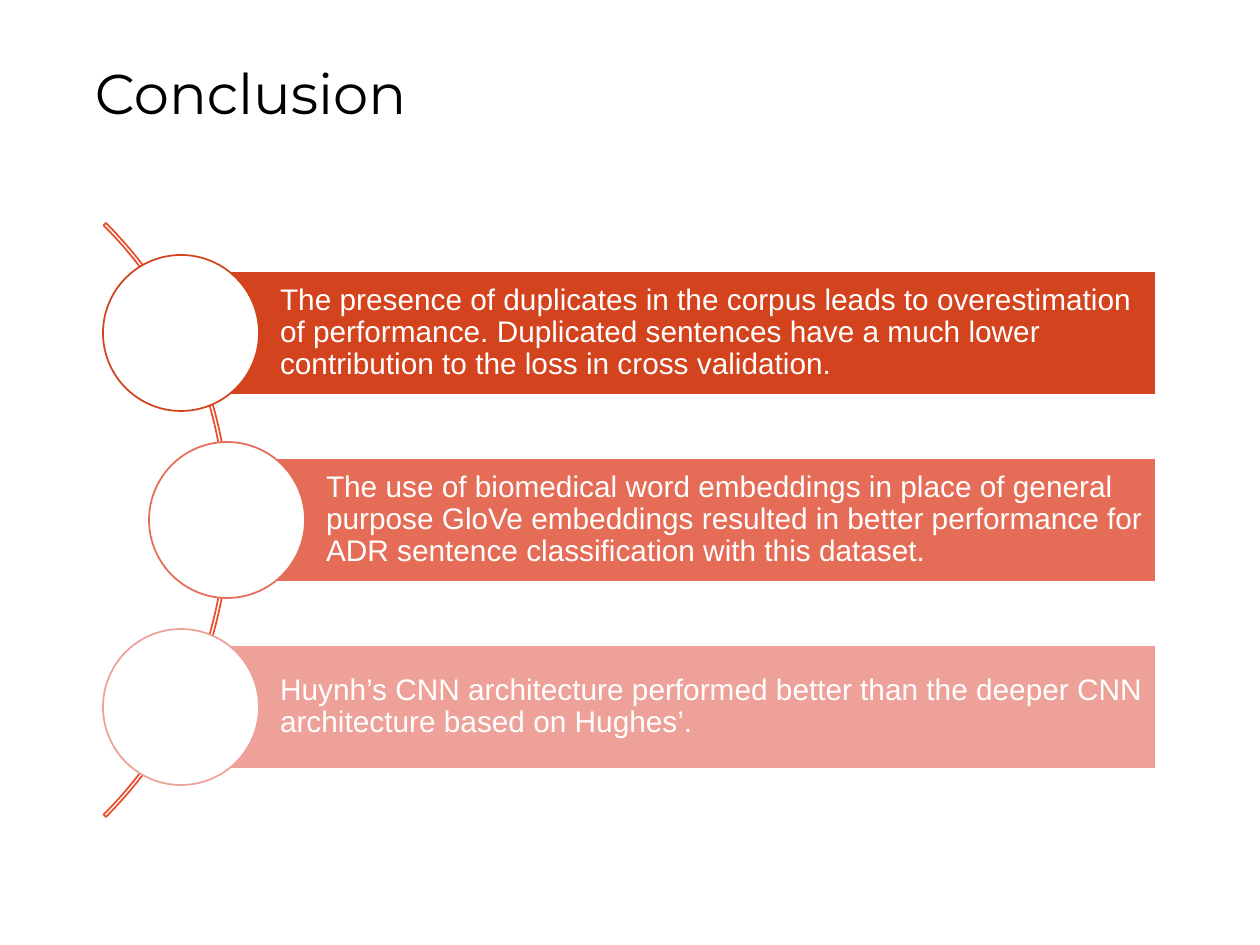
from pptx import Presentation
from pptx.dml.color import RGBColor
from pptx.enum.shapes import MSO_SHAPE
from pptx.enum.text import MSO_ANCHOR, PP_ALIGN
from pptx.util import Pt

EMU_PER_PX = 914400 / 126
ARC, BAR, CIRCLE = MSO_SHAPE.BLOCK_ARC, MSO_SHAPE.RECTANGLE, MSO_SHAPE.OVAL
TOP, MIDDLE, LEFT = MSO_ANCHOR.TOP, MSO_ANCHOR.MIDDLE, PP_ALIGN.LEFT

SLIDE_W, SLIDE_H = 1260, 945
ARC_DIAMETER = 840
CIRCLE_DIAMETER = 156
BAR_RIGHT, BAR_HEIGHT = 1156, 124
MIDDLE_Y, ROW_PITCH = 520, 187

CONCLUSIONS = [
    (181, "D2431E", "The presence of duplicates in the corpus leads to overestimation of "
     "performance. Duplicated sentences have a much lower contribution to the loss in "
     "cross validation."),
    (227, "E56C56", "The use of biomedical word embeddings in place of general purpose "
     "GloVe embeddings resulted in better performance for ADR sentence classification "
     "with this dataset."),
    (181, "EEA199", "Huynh’s CNN architecture performed better than the deeper CNN "
     "architecture based on Hughes’."),
]


def px(length):
    return round(length * EMU_PER_PX)


def color(hex_value):
    return RGBColor.from_string(hex_value)


class ConclusionSlide:
    title_font, body_font = "Montserrat", "Arial"
    ink, paper = "000000", "FFFFFF"

    def __init__(self, prs):
        self.shapes = prs.slides.add_slide(prs.slide_layouts[6]).shapes

    def shape(self, preset, left, top, width, height, line, fill=None):
        shape = self.shapes.add_shape(preset, px(left), px(top), px(width), px(height))
        shape.shadow.inherit = False
        if fill:
            shape.fill.solid()
            shape.fill.fore_color.rgb = color(fill)
        else:
            shape.fill.background()
        shape.line.color.rgb = color(line)
        shape.line.width = Pt(1)
        return shape

    def set_text(self, shape, text, font, size, ink, spacing, anchor, insets):
        """Fill a shape with one paragraph; insets are left, top, right, bottom."""
        frame = shape.text_frame
        frame.word_wrap = True
        frame.vertical_anchor = anchor
        (frame.margin_left, frame.margin_top,
         frame.margin_right, frame.margin_bottom) = map(px, insets)
        paragraph = frame.paragraphs[0]
        paragraph.text = text
        paragraph.alignment = LEFT
        paragraph.line_spacing = spacing
        paragraph.font.name = font
        paragraph.font.size = Pt(size)
        paragraph.font.color.rgb = color(ink)

    def title(self, text):
        box = self.shapes.add_textbox(px(95), px(63), px(1071), px(132))
        self.set_text(box, text, self.title_font, 32, self.ink, 0.95, TOP, (0, 0, 0, 0))

    def arc(self):
        """Thin quarter ring, open to the left, that links the circles."""
        arc = self.shape(ARC, -611, MIDDLE_Y - ARC_DIAMETER // 2,
                         ARC_DIAMETER, ARC_DIAMETER, "E74F2D")
        for index, value in enumerate((189, 27, 0.004)):
            arc.adjustments[index] = value

    def conclusion(self, center_x, center_y, accent, text):
        """Bar that starts at the centre of its circle."""
        bar = self.shape(BAR, center_x, center_y - BAR_HEIGHT // 2,
                         BAR_RIGHT - center_x, BAR_HEIGHT, self.paper, accent)
        self.set_text(bar, text, self.body_font, 17, self.paper, 0.9, MIDDLE, (99, 6, 6, 6))
        radius = CIRCLE_DIAMETER // 2
        self.shape(CIRCLE, center_x - radius, center_y - radius,
                   CIRCLE_DIAMETER, CIRCLE_DIAMETER, accent, self.paper)


def main():
    prs = Presentation()
    prs.slide_width, prs.slide_height = px(SLIDE_W), px(SLIDE_H)
    slide = ConclusionSlide(prs)
    slide.title("Conclusion")
    slide.arc()
    for row, (center_x, accent, text) in enumerate(CONCLUSIONS):
        slide.conclusion(center_x, MIDDLE_Y + (row - 1) * ROW_PITCH, accent, text)
    prs.save("out.pptx")


if __name__ == "__main__":
    main()
